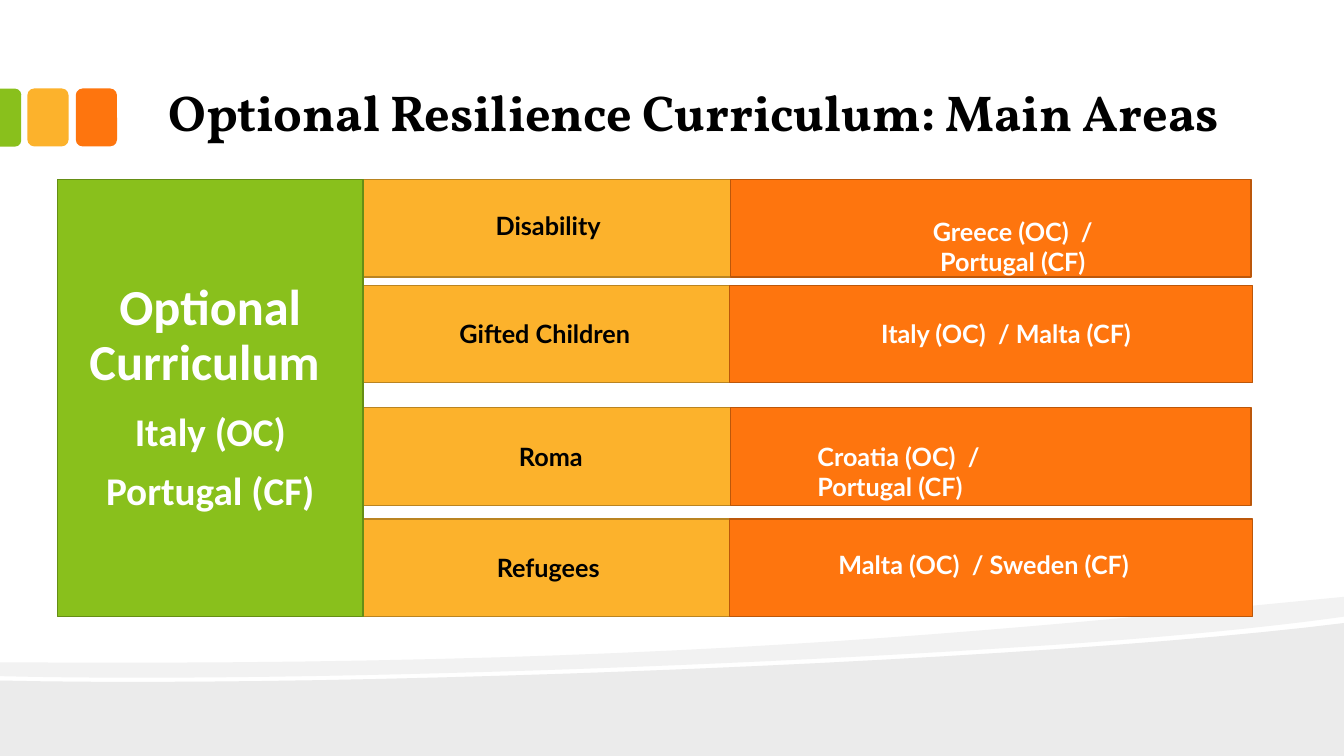
"""Build the slide on the main areas of the optional resilience curriculum."""
from pptx import Presentation
from pptx.dml.color import RGBColor
from pptx.enum.shapes import MSO_SHAPE as Preset
from pptx.enum.text import MSO_ANCHOR as Anchor, MSO_AUTO_SIZE as AutoSize, PP_ALIGN as Align
from pptx.util import Cm, Pt

GREEN, YELLOW, ORANGE = "89C01C", "FCB22C", "FE750E"
BLACK, WHITE = "000000", "FFFFFF"
color = RGBColor.from_string


def paint(shape, fill, line=None):
    shape.shadow.inherit = False
    shape.fill.solid()
    shape.fill.fore_color.rgb = color(fill)
    if line:
        shape.line.color.rgb = color(line)
        shape.line.width = Pt(0.85)
    else:
        shape.line.fill.background()


def curve(*controls, steps=24):
    points = []
    for step in range(steps + 1):
        t = step / steps
        weights = ((1 - t) ** 3, 3 * t * (1 - t) ** 2, 3 * t ** 2 * (1 - t), t ** 3)
        points.append(tuple(Cm(sum(w * control[axis] for w, control in zip(weights, controls)))
                            for axis in (0, 1)))
    return points


deck = Presentation()
deck.slide_width, deck.slide_height = Cm(33.87), Cm(19.05)
page = deck.slides.add_slide(deck.slide_layouts[5])
shapes = page.shapes

lower_wave = curve((0, 17.15), (8.94, 17.35), (26.47, 16.64), (33.87, 15.7))
lower_wave += [(Cm(33.87), Cm(19.05)), (0, Cm(19.05))]
upper_wave = curve((0, 16.69), (16.56, 16.81), (24.66, 15.93), (33.87, 15.04))
upper_wave += curve((33.87, 15.54), (31.88, 15.82), (29.18, 16.08), (26.14, 16.28))
upper_wave += curve((26.14, 16.28), (17.73, 16.84), (6.55, 17.2), (0, 17.04))
for outline, gray in ((lower_wave, "EBEBEB"), (upper_wave, "F2F2F2")):
    builder = shapes.build_freeform(*outline[0])
    builder.add_line_segments(outline[1:], close=True)
    paint(builder.convert_to_shape(), gray)

for left, fill in ((1.91, ORANGE), (0.69, YELLOW)):
    tab = shapes.add_shape(Preset.ROUNDED_RECTANGLE, Cm(left), Cm(2.23), Cm(1.04), Cm(1.46))
    paint(tab, fill)
edge_tab = shapes.add_shape(Preset.ROUND_2_SAME_RECTANGLE, Cm(-0.46), Cm(2.7), Cm(1.46), Cm(0.53))
edge_tab.rotation = 90
edge_tab.adjustments[0] = 0.29
paint(edge_tab, GREEN)

title = shapes.title
title.left, title.top, title.width, title.height = Cm(2.92), Cm(0.15), Cm(29.13), Cm(3.61)
frame = title.text_frame
frame.text = "Optional Resilience Curriculum: Main Areas"
frame.auto_size = AutoSize.NONE
frame.word_wrap = True
frame.vertical_anchor = Anchor.BOTTOM
frame.margin_left = frame.margin_right = Cm(0.33)
frame.margin_top = frame.margin_bottom = Cm(0.18)
para = frame.paragraphs[0]
para.alignment = Align.CENTER
para.font.name, para.font.size, para.font.bold = "Vollkorn", Pt(36), True
para.font.color.rgb = color(BLACK)

bars = [
    (4.52, 9.12, 18.42, 13.11),
    (7.19, 9.12, 18.39, 13.18),
    (10.27, 9.12, 18.42, 13.11),
    (13.08, 9.14, 18.39, 13.18),
]
for top, area_left, partner_left, partner_width in bars:
    for left, width, fill, line in ((area_left, 9.3, YELLOW, "BA8421"),
                                    (partner_left, partner_width, ORANGE, "BC570A")):
        bar = shapes.add_shape(Preset.RECTANGLE, Cm(left), Cm(top), Cm(width), Cm(2.46))
        paint(bar, fill, line)

labels = [
    ("Disability", 12.24, 5.18, 3.53, Align.LEFT, BLACK),
    ("Gifted Children", 11.33, 7.9, 5.36, Align.LEFT, BLACK),
    ("Roma", 12.83, 11, 2.36, Align.LEFT, BLACK),
    ("Refugees", 12.27, 13.79, 3.53, Align.LEFT, BLACK),
    ("Greece (OC)  / Portugal (CF)", 22.17, 5.33, 6.71, Align.CENTER, WHITE),
    ("Italy (OC)  / Malta (CF)", 21.34, 7.9, 8.03, Align.CENTER, WHITE),
    ("Croatia (OC)  / Portugal (CF)", 20.35, 11, 6.76, Align.LEFT, WHITE),
    ("Malta (OC)  / Sweden (CF)", 20.88, 13.72, 9.09, Align.LEFT, WHITE),
]
for text, left, top, width, alignment, ink in labels:
    box = shapes.add_textbox(Cm(left), Cm(top), Cm(width), Cm(1.02))
    box.text_frame.text = text
    box.text_frame.word_wrap = True
    para = box.text_frame.paragraphs[0]
    para.alignment = alignment
    para.font.name, para.font.size, para.font.bold = "Lato", Pt(18), True
    para.font.color.rgb = color(ink)

curriculum = shapes.add_shape(Preset.RECTANGLE, Cm(1.45), Cm(4.52), Cm(7.7), Cm(11.02))
paint(curriculum, GREEN, "658E15")
frame = curriculum.text_frame
frame.word_wrap = True
frame.vertical_anchor = Anchor.MIDDLE
frame.margin_left = frame.margin_right = frame.margin_top = frame.margin_bottom = Cm(0.69)
lines = [("Optional Curriculum ", 36, 15), ("Italy (OC)", 28, 12), ("Portugal (CF)", 28, 15)]
frame.text = "\n".join(text for text, size, gap in lines)
for para, (text, size, gap) in zip(frame.paragraphs, lines):
    para.alignment = Align.CENTER
    para.line_spacing = 0.9
    para.space_after = Pt(gap)
    para.font.name, para.font.size, para.font.bold = "Calibri", Pt(size), True
    para.font.color.rgb = color(WHITE)

deck.save("out.pptx")
